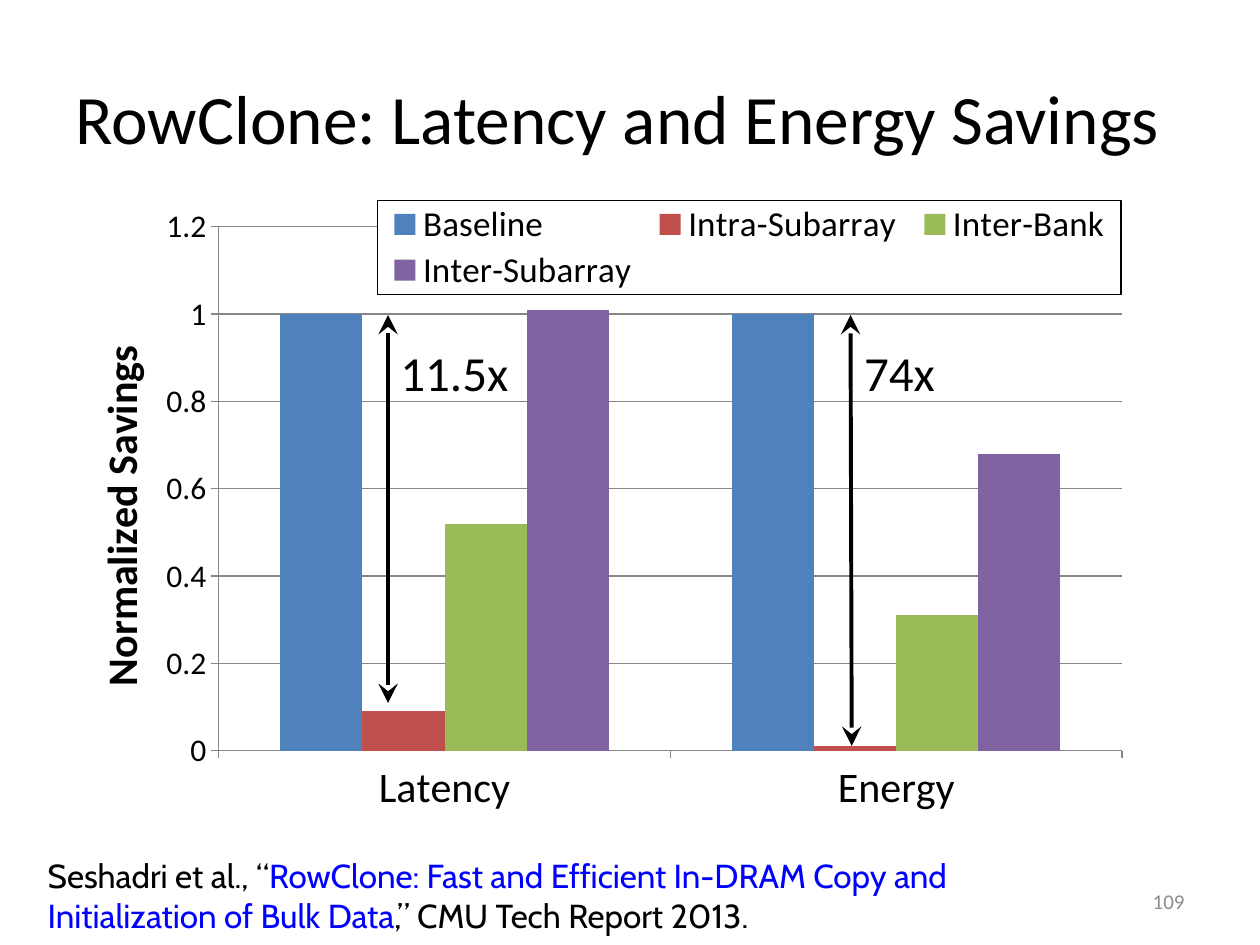
import pptx
import pptx.chart.data
import pptx.dml.color
import pptx.enum.chart
import pptx.enum.shapes
import pptx.enum.text
import pptx.oxml
import pptx.oxml.ns
import pptx.util

Pt = pptx.util.Pt
RGB = pptx.dml.color.RGBColor
Anchor = pptx.enum.text.MSO_ANCHOR
Align = pptx.enum.text.PP_ALIGN
Kinds = pptx.enum.chart
qn = pptx.oxml.ns.qn
NS = pptx.oxml.ns.nsdecls("c", "a")

BLACK = RGB(0x00, 0x00, 0x00)
BLUE = RGB(0x00, 0x00, 0xFF)
GRAY = RGB(0x8C, 0x8C, 0x8C)
RULE = RGB(0x87, 0x87, 0x87)

# box, wrap, anchor, alignment, size, font, runs
TEXTS = [
    ((36, 21.6, 648, 90), True, Anchor.MIDDLE, Align.LEFT, 39.6, "Calibri",
     [("RowClone: Latency and Energy Savings", BLACK)]),
    ((221.76, 192.24, 77, 41), False, Anchor.TOP, Align.LEFT, 28, "Calibri",
     [("11.5x", BLACK)]),
    ((486.72, 192.24, 55.4, 41), False, Anchor.TOP, Align.LEFT, 28, "Calibri",
     [("74x", BLACK)]),
    ((516, 500.4, 168, 28.8), True, Anchor.MIDDLE, Align.RIGHT, 12, "Calibri",
     [("109", GRAY)]),
    ((20.16, 485.28, 617.76, 53.28), True, Anchor.TOP, Align.LEFT, 19, "Cabin",
     [("Seshadri et al., “", BLACK),
      ("RowClone: Fast and Efficient In-DRAM Copy and "
       "Initialization of Bulk Data", BLUE),
      (",” CMU Tech Report 2013.", BLACK)]),
]
ARROWS = [(221.76, 180, 221.76, 401.76), (486, 180, 486.72, 426.24)]

CHART = (36, 113.76, 635.76, 378)
CATS = ["Latency", "Energy"]
SERIES = [
    ("Baseline", (1, 1), RGB(0x4F, 0x81, 0xBD)),
    ("Intra-Subarray", (0.09, 0.01), RGB(0xC0, 0x50, 0x4D)),
    ("Inter-Bank", (0.52, 0.31), RGB(0x9B, 0xBB, 0x59)),
    ("Inter-Subarray", (1.01, 0.68), RGB(0x80, 0x64, 0xA2)),
]


def style(font, size, color=BLACK, name="Calibri", bold=False):
    for key, val in dict(size=Pt(size), name=name, bold=bold).items():
        setattr(font, key, val)
    font.color.rgb = color


def layout(node, spot, x, y, w=None, h=None, inner=False):
    """Give a chart part a fixed place, in fractions of the chart."""
    for old in node.findall(qn("c:layout")):
        node.remove(old)
    tags = [("layoutTarget", "inner")] if inner else []
    tags += [("xMode", "edge"), ("yMode", "edge"), ("x", x), ("y", y)]
    tags += [(tag, val) for tag, val in (("w", w), ("h", h)) if val]
    body = "".join(f'<c:{tag} val="{val}"/>' for tag, val in tags)
    part = pptx.oxml.parse_xml(
        f"<c:layout {NS}><c:manualLayout>{body}</c:manualLayout></c:layout>")
    node.insert(spot(node), part)


def before(tag):
    return lambda node: node.index(node.find(qn(tag)))


def add_text(slide, box, wrap, anchor, align, size, name, runs):
    frame = slide.shapes.add_textbox(*map(Pt, box)).text_frame
    frame.word_wrap = wrap
    frame.vertical_anchor = anchor
    para = frame.paragraphs[0]
    para.alignment = align
    for text, color in runs:
        run = para.add_run()
        run.text = text
        style(run.font, size, color, name)


def add_arrow(slide, ends):
    line = slide.shapes.add_connector(
        pptx.enum.shapes.MSO_CONNECTOR.STRAIGHT, *map(Pt, ends))
    line.line.color.rgb = BLACK
    line.line.width = Pt(2.25)
    stroke = line.line._get_or_add_ln()
    for tag in ("headEnd", "tailEnd"):
        stroke.append(pptx.oxml.parse_xml(
            f'<a:{tag} {NS} type="stealth" w="lg" len="lg"/>'))
    stroke.addnext(pptx.oxml.parse_xml(f"<a:effectLst {NS}/>"))


def add_chart(slide):
    data = pptx.chart.data.CategoryChartData()
    data.categories = CATS
    for name, vals, _ in SERIES:
        data.add_series(name, vals)
    chart = slide.shapes.add_chart(
        Kinds.XL_CHART_TYPE.COLUMN_CLUSTERED, *map(Pt, CHART), data).chart
    style(chart.font, 10)
    chart.has_title = False
    plot = chart.plots[0]
    for key, val in dict(gap_width=150, overlap=0,
                         vary_by_categories=False).items():
        setattr(plot, key, val)
    for series, (_, _, color) in zip(plot.series, SERIES):
        series.format.fill.solid()
        series.format.fill.fore_color.rgb = color
    area = chart._chartSpace.find(".//" + qn("c:plotArea"))
    layout(area, lambda node: 0, 0.14, 0.042, 0.812, 0.792, True)

    across, up = chart.category_axis, chart.value_axis
    for axis, size in ((across, 24), (up, 18)):
        style(axis.tick_labels.font, size)
        axis.major_tick_mark = Kinds.XL_TICK_MARK.OUTSIDE
        axis.minor_tick_mark = Kinds.XL_TICK_MARK.NONE
        axis.format.line.color.rgb = RULE
    scale = dict(minimum_scale=0, maximum_scale=1.2, major_unit=0.2,
                 has_major_gridlines=True)
    for key, val in scale.items():
        setattr(up, key, val)
    up.major_gridlines.format.line.color.rgb = RULE
    up.tick_labels.number_format = "General"
    up.tick_labels.number_format_is_linked = False

    title = up.axis_title
    title.text_frame.text = "Normalized Savings"
    style(title.text_frame.paragraphs[0].runs[0].font, 24, bold=True)
    node = title._element
    turn = node.find(".//" + qn("a:bodyPr"))
    turn.set("rot", "-5400000")
    turn.set("vert", "horz")
    layout(node, before("c:overlay"), 0.02, 0.21)

    chart.has_legend = True
    legend = chart.legend
    legend.position = Kinds.XL_LEGEND_POSITION.RIGHT
    legend.include_in_layout = False
    style(legend.font, 20)
    node = legend._element
    layout(node, before("c:overlay"), 0.283, 0.002, 0.668, 0.142)
    node.find(qn("c:overlay")).addnext(pptx.oxml.parse_xml(
        f'<c:spPr {NS}><a:solidFill><a:srgbClr val="FFFFFF"/></a:solidFill>'
        '<a:ln w="9525"><a:solidFill><a:srgbClr val="000000"/></a:solidFill>'
        "</a:ln></c:spPr>"))


def main():
    deck = pptx.Presentation()
    deck.slide_width, deck.slide_height = Pt(720), Pt(540)
    slide = deck.slides.add_slide(deck.slide_layouts[6])
    add_chart(slide)
    for ends in ARROWS:
        add_arrow(slide, ends)
    for text in TEXTS:
        add_text(slide, *text)
    deck.save("out.pptx")


if __name__ == "__main__":
    main()
